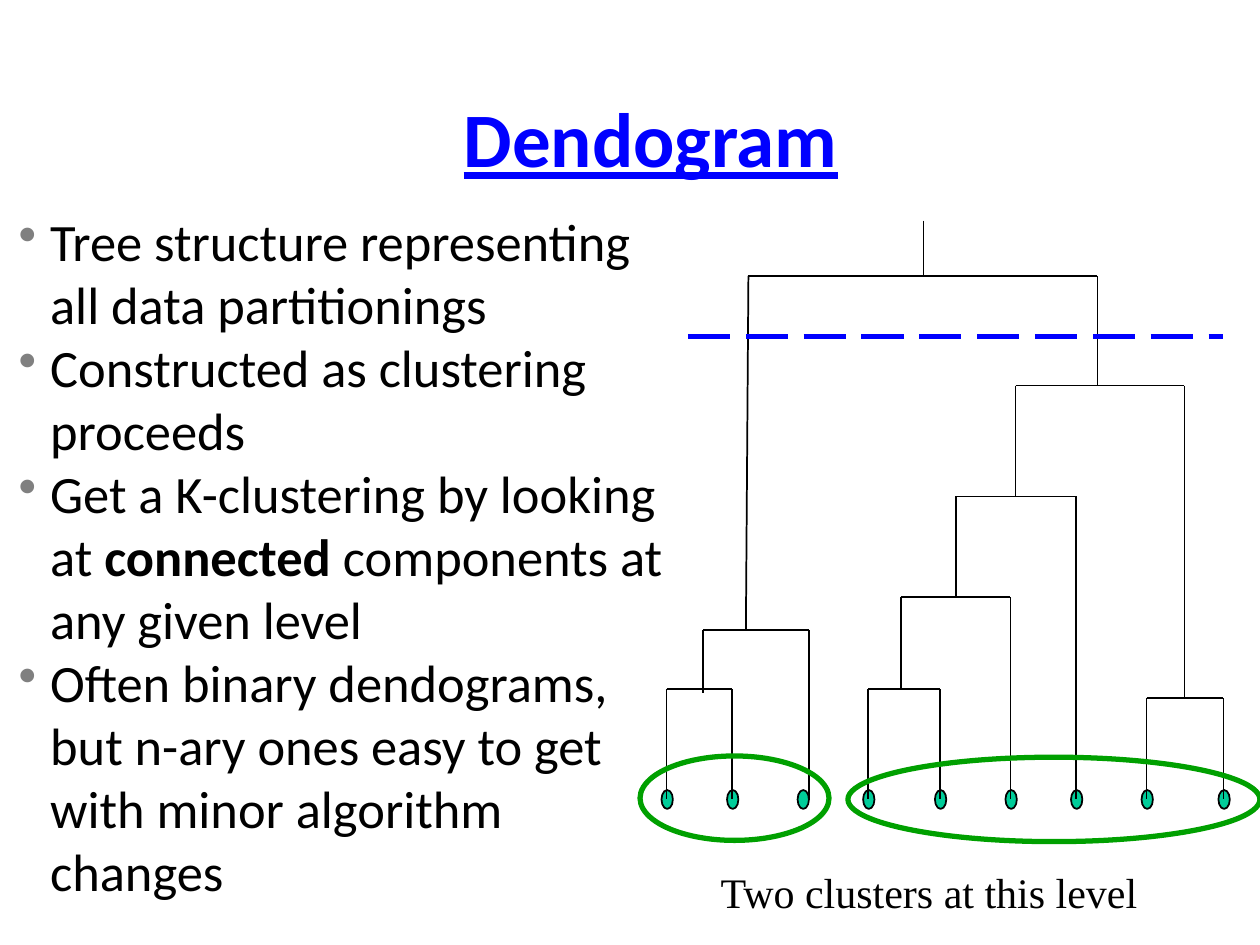
from pptx import Presentation, util as u
from pptx.dml.color import RGBColor
from pptx.enum import dml, shapes, text
from pptx.oxml.ns import qn
from lxml import etree

PX = 9144
INK = {"black": "000000", "blue": "0000FF", "teal": "00CC99", "green": "00A000", "gray": "808080"}
POINTS = [
    [("Tree structure representing all data partitionings", False)],
    [("Constructed as clustering proceeds", False)],
    [("Get a K-clustering by looking at ", False), ("connected", True),
     (" components at any given level", False)],
    [("Often binary dendograms, but n-ary ones easy to get with minor algorithm changes", False)],
]
LEAVES = [529, 581, 637, 689, 746, 802, 854, 910, 971]
BASE = 634
# left, right, top, left foot, right foot, lean of the left leg
FORKS = [
    (529, 581, 547, BASE, BASE, 0),
    (689, 746, 547, BASE, BASE, 0),
    (910, 971, 554, BASE, BASE, 0),
    (558, 642, 500, 550, BASE, 0),
    (715, 802, 474, 547, BASE, 0),
    (759, 854, 394, 474, BASE, 0),
    (806, 940, 306, 394, 554, 0),
    (594, 871, 219, 500, 306, -2),
]


def px(*vals):
    """Turn pixel lengths into EMU."""
    return [u.Emu(v * PX) for v in vals]


def hue(name):
    """Look up a colour by name."""
    return RGBColor.from_string(INK[name])


def write(par, words, size=30, font="Calibri", color="black", bold=False, line=False):
    """Add a formatted run to a paragraph."""
    run = par.add_run()
    run.text = words
    face = run.font
    face.size, face.name, face.bold, face.underline = u.Pt(size), font, bold, line
    face.color.rgb = hue(color)


def bullet(par):
    """Give a paragraph a gray bullet with a hanging indent."""
    props = par._p.get_or_add_pPr()
    props.set("marL", str(31 * PX))
    props.set("indent", str(-25 * PX))
    tint = etree.SubElement(props, qn("a:buClr"))
    etree.SubElement(tint, qn("a:srgbClr"), val=INK["gray"])
    etree.SubElement(props, qn("a:buChar"), char="•")


def box(slide, *area):
    """Add a wrapping text box and return its frame."""
    frame = slide.shapes.add_textbox(*px(*area)).text_frame
    frame.word_wrap = True
    return frame


def oval(slide, area, color, width, fill=None):
    """Add an outlined ellipse, filled if a fill is named."""
    item = slide.shapes.add_shape(shapes.MSO_SHAPE.OVAL, *px(*area))
    item.shadow.inherit = False
    item.line.color.rgb = hue(color)
    item.line.width = u.Pt(width)
    if fill:
        item.fill.solid()
        item.fill.fore_color.rgb = hue(fill)
    else:
        item.fill.background()


def rule(slide, *ends, color="black", width=1, dash=None):
    """Draw a straight line between two points."""
    item = slide.shapes.add_connector(shapes.MSO_CONNECTOR.STRAIGHT, *px(*ends))
    item.line.color.rgb = hue(color)
    item.line.width = u.Pt(width)
    if dash:
        item.line.dash_style = dash
    etree.SubElement(item._element.spPr, qn("a:effectLst"))


def fork(slide, left, right, top, lfoot, rfoot, lean):
    """Draw one merge of two branches."""
    rule(slide, left, top, right, top)
    rule(slide, left, top, left + lean, lfoot)
    rule(slide, right, top, right, rfoot)


def head(slide):
    """Place and format the title."""
    title = slide.shapes.title
    title.left, title.top, title.width, title.height = px(83, 50, 867, 117)
    frame = title.text_frame
    frame.vertical_anchor = text.MSO_ANCHOR.MIDDLE
    par = frame.paragraphs[0]
    par.alignment = text.PP_ALIGN.CENTER
    write(par, "Dendogram", size=44, color="blue", bold=True, line=True)


def points(slide):
    """Write the bulleted list."""
    frame = box(slide, -1, 161, 540, 528)
    for num, runs in enumerate(POINTS):
        par = frame.add_paragraph() if num else frame.paragraphs[0]
        par.line_spacing = u.Pt(36)
        bullet(par)
        for words, bold in runs:
            write(par, words, bold=bold)


def tree(slide):
    """Draw the dendrogram with its cut and clusters."""
    for mid in LEAVES:
        oval(slide, (mid - 4, 627, 9, 15), "black", 1, fill="teal")
    for item in FORKS:
        fork(slide, *item)
    rule(slide, 733, 175, 733, 219)
    rule(slide, 546, 267, 971, 267, color="blue", width=3, dash=dml.MSO_LINE.LONG_DASH)
    for area in ((508, 600, 150, 67), (673, 601, 327, 67)):
        oval(slide, area, "green", 3)


def main():
    """Build the slide and save it."""
    deck = Presentation()
    deck.slide_width, deck.slide_height = px(1000, 750)
    slide = deck.slides.add_slide(deck.slide_layouts[5])
    points(slide)
    head(slide)
    tree(slide)
    par = box(slide, 508, 683, 467, 50).paragraphs[0]
    par.alignment = text.PP_ALIGN.CENTER
    write(par, "Two clusters at this level ", size=24, font="Times New Roman")
    deck.save("out.pptx")


if __name__ == "__main__":
    main()
